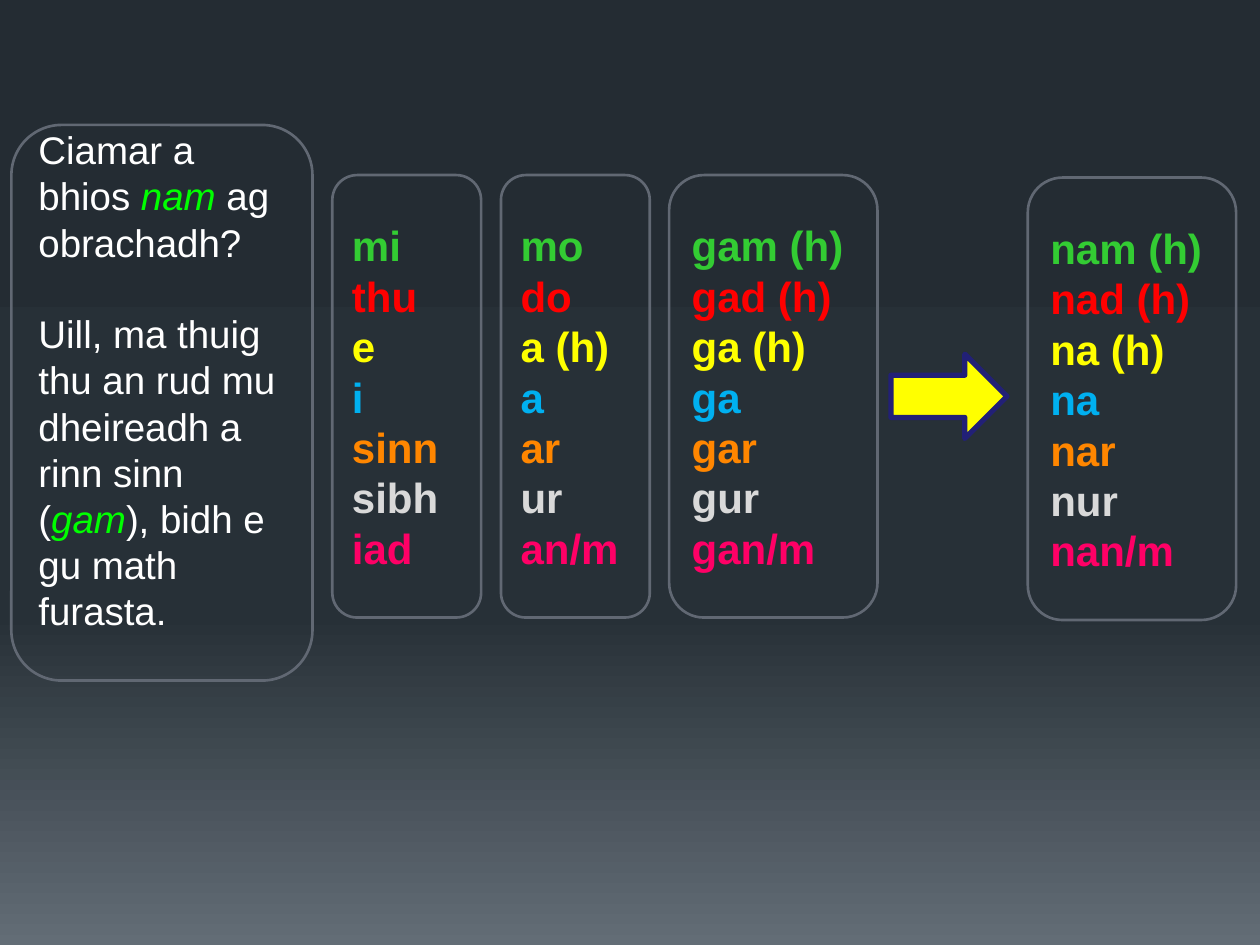
from copy import deepcopy

from pptx import Presentation
from pptx.dml.color import RGBColor
from pptx.enum.shapes import MSO_SHAPE
from pptx.enum.text import MSO_ANCHOR, PP_ALIGN
from pptx.oxml.ns import qn
from pptx.util import Cm, Pt

ROUNDED = MSO_SHAPE.ROUNDED_RECTANGLE
ARROW = MSO_SHAPE.RIGHT_ARROW
MIDDLE = MSO_ANCHOR.MIDDLE
LEFT = PP_ALIGN.LEFT

COLORS = {
    "bg_top": "242C33", "bg_mid": "273037", "bg_bottom": "636D76",
    "frame": "616873", "arrow": "FFFF00", "arrow_line": "222076",
    "text": "FFFFFF", "example": "00FF00",
    "mi": "33CC33", "thu": "FF0000", "e": "FFFF00", "i": "00B0F0",
    "sinn": "FF8600", "sibh": "D9D9D9", "iad": "FF0066",
}
PERSONS = ["mi", "thu", "e", "i", "sinn", "sibh", "iad"]


def rgb(name):
    return RGBColor.from_string(COLORS[name])


def add_panel(s, paragraphs, left, top, width, height, size=24, bold=True, gap=0):
    """Outlined panel; each paragraph is a list of (text, colour name, italic)."""
    sp = s.shapes.add_shape(ROUNDED, Cm(left), Cm(top), Cm(width), Cm(height))
    sp.shadow.inherit = False
    sp.fill.background()
    sp.line.color.rgb = rgb("frame")
    sp.line.width = Pt(1.5)
    tf = sp.text_frame
    tf.word_wrap = True
    tf.vertical_anchor = MIDDLE
    for n, runs in enumerate(paragraphs):
        p = tf.add_paragraph() if n else tf.paragraphs[0]
        p.alignment = LEFT
        p.space_before = Pt(gap if n else 0)
        for text, color, italic in runs:
            r = p.add_run()
            r.text = text
            r.font.name = "Arial"
            r.font.size = Pt(size)
            r.font.bold = bold
            r.font.italic = italic
            r.font.color.rgb = rgb(color)
    return sp


prs = Presentation()
prs.slide_width, prs.slide_height = Cm(25.4), Cm(19.05)
s = prs.slides.add_slide(prs.slide_layouts[6])

# Background gradient with a third stop
fill = s.background.fill
fill.gradient()
fill.gradient_angle = 270
stop_list = s.element.find(".//" + qn("a:gsLst"))
stop_list.insert(1, deepcopy(stop_list[0]))
stops = [("bg_top", 0), ("bg_mid", 0.65), ("bg_bottom", 1)]
for stop, (color, position) in zip(fill.gradient_stops, stops):
    stop.color.rgb = rgb(color)
    stop.position = position

# Question and answer
dialogue = [
    [("Ciamar a bhios ", "text", False), ("nam", "example", True),
     (" ag obrachadh?", "text", False)],
    [("Uill, ma thuig thu an rud mu dheireadh a rinn sinn (", "text", False),
     ("gam", "example", True), ("), bidh e gu math furasta.", "text", False)],
]
sp = add_panel(s, dialogue, 0.23, 2.52, 6.07, 11.2, size=22, bold=False, gap=26)
sp.text_frame.margin_bottom = Cm(1.05)

# Pronoun columns, one colour per person
columns = [
    (6.7, 3.53, 3, PERSONS),
    (10.1, 3.53, 3, ["mo", "do", "a (h)", "a", "ar", "ur", "an/m"]),
    (13.49, 3.53, 4.2, ["gam (h)", "gad (h)", "ga (h)", "ga", "gar", "gur", "gan/m"]),
    (20.72, 3.58, 4.2, ["nam (h)", "nad (h)", "na (h)", "na", "nar", "nur", "nan/m"]),
]
for left, top, width, words in columns:
    rows = [[(word, person, False)] for word, person in zip(words, PERSONS)]
    add_panel(s, rows, left, top, width, 8.92)

arrow = s.shapes.add_shape(ARROW, Cm(17.96), Cm(7.14), Cm(2.34), Cm(1.7))
arrow.shadow.inherit = False
arrow.fill.solid()
arrow.fill.fore_color.rgb = rgb("arrow")
arrow.line.color.rgb = rgb("arrow_line")
arrow.line.width = Pt(3)

prs.save("out.pptx")
